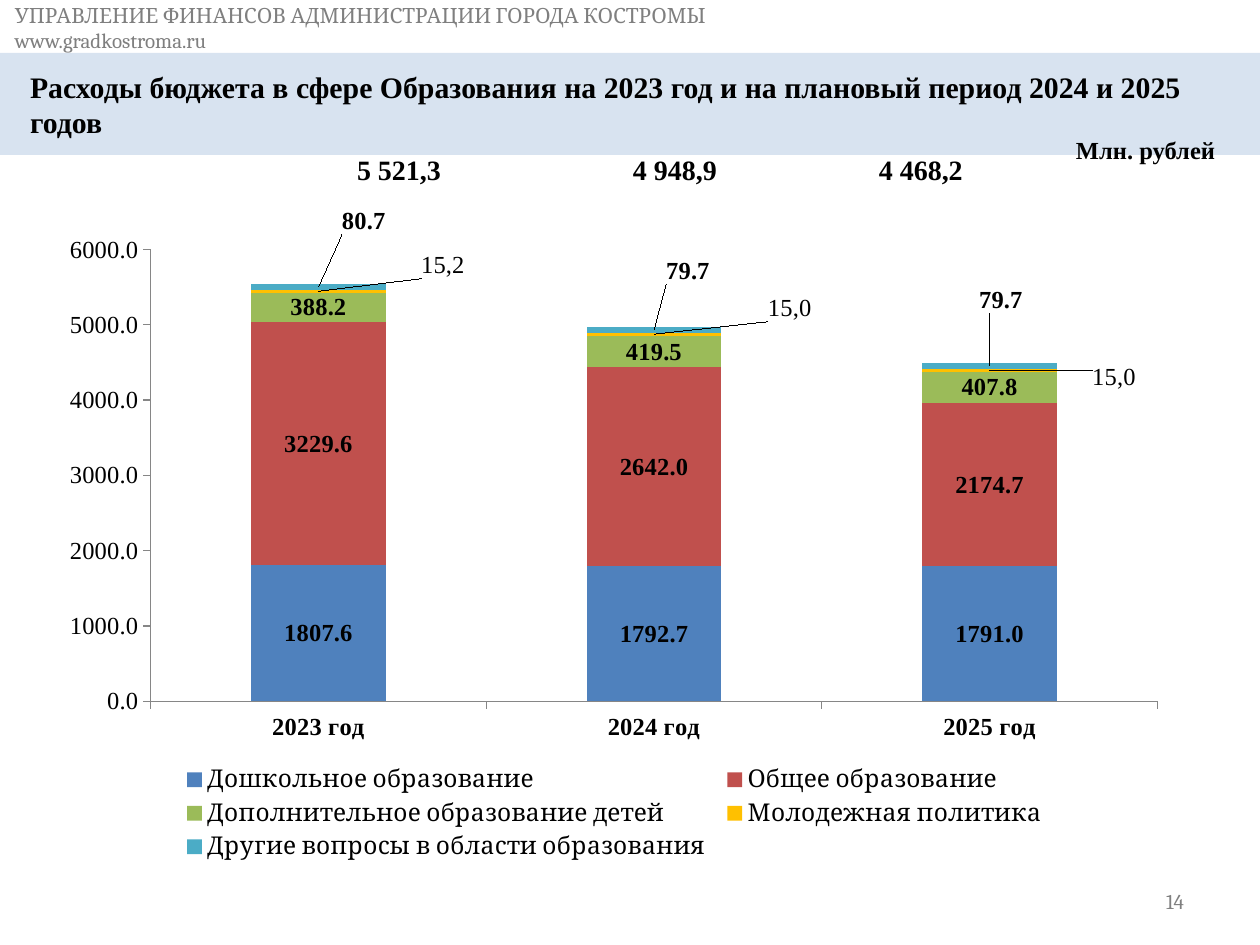
import pptx
import pptx.chart.data
import pptx.dml.color
import pptx.enum.chart
import pptx.enum.text
import pptx.util
import lxml.etree

SCALE = 914400 / 126
SERIF = "Times New Roman"
HEAD = "Cambria"
HUES = {
    "text": "000000", "mute": "7F7F7F", "page": "808080", "band": "D8E3F0",
    "axis": "868686", "pre": "4F81BD", "main": "C0504D", "extra": "9BBB59",
    "youth": "FFC000", "other": "4BACC6",
}
YEARS = ["2023 год", "2024 год", "2025 год"]
ROWS = [
    ("Дошкольное образование", "pre", (1807.6, 1792.7, 1791.0)),
    ("Общее образование", "main", (3229.6, 2642.0, 2174.7)),
    ("Дополнительное образование детей", "extra", (388.2, 419.5, 407.8)),
    ("Молодежная политика", "youth", (40.2, 40.0, 40.0)),
    ("Другие вопросы в области образования", "other", (80.7, 79.7, 79.7)),
]
NOTES = {
    3: [("15,2", 0.11, -0.04), ("15,0", 0.12, -0.04), ("15,0", 0.11, 0.01)],
    4: [(None, 0.04, -0.1), (None, 0.03, -0.09), (None, 0.01, -0.1)],
}
ANCHOR = pptx.enum.text.MSO_ANCHOR
ALIGN = pptx.enum.text.PP_ALIGN


def px(size):
    """Turn pixels into EMU."""
    return pptx.util.Emu(round(size * SCALE))


def hue(name):
    """Look up a colour."""
    return pptx.dml.color.RGBColor.from_string(HUES[name])


def style(font, size=14, bold=False, face=SERIF, tint="text"):
    """Format a font."""
    font.size = pptx.util.Pt(size)
    font.bold = bold
    font.name = face
    font.color.rgb = hue(tint)


def write(shape, text, align=ALIGN.LEFT, anchor=ANCHOR.TOP, pad=(13, 6),
          wrap=True, **look):
    """Put formatted text in a shape; a vertical tab breaks the line."""
    frame = shape.text_frame
    frame.auto_size = pptx.enum.text.MSO_AUTO_SIZE.NONE
    frame.word_wrap = wrap
    frame.vertical_anchor = anchor
    frame.margin_left = frame.margin_right = px(pad[0])
    frame.margin_top = frame.margin_bottom = px(pad[1])
    para = frame.paragraphs[0]
    para.text = text
    para.alignment = align
    for run in para.runs:
        style(run.font, **look)


def label(slide, box, text, **look):
    """Add a text box."""
    write(slide.shapes.add_textbox(*map(px, box)), text, **look)


def title(slide, box):
    """Place the title on its band."""
    shape = slide.shapes.title
    shape.left, shape.top, shape.width, shape.height = map(px, box)
    shape.fill.solid()
    shape.fill.fore_color.rgb = hue("band")
    write(shape, "Расходы бюджета в сфере Образования на 2023 год "
          "и на плановый период 2024 и 2025 годов",
          anchor=ANCHOR.MIDDLE, pad=(30, 15), size=17, bold=True)


def totals(slide, box):
    """Place the yearly totals and the unit."""
    left, top, width, height = box
    for shift, text in ((0, "5 521,3"), (276, "4 948,9"), (522, "4 468,2")):
        label(slide, (left + shift, top, width, height), text, size=16, bold=True)
    label(slide, (left + 719, top - 18, 166, 43), "Млн. рублей",
          wrap=False, bold=True)


def layout(parent, index, **parts):
    """Give a chart part a manual layout."""
    space = parent.nsmap["c"]
    for old in parent.findall(f"{{{space}}}layout"):
        parent.remove(old)
    outer = lxml.etree.Element(f"{{{space}}}layout")
    inner = lxml.etree.SubElement(outer, f"{{{space}}}manualLayout")
    for name, value in parts.items():
        lxml.etree.SubElement(inner, f"{{{space}}}{name}", val=str(value))
    parent.insert(index, outer)


def mark(series, notes):
    """Move the point labels off the bars."""
    for spot, (text, *_) in enumerate(notes):
        tag = series.points[spot].data_label
        if text:
            para = tag.text_frame.paragraphs[0]
            para.text = text
            style(para.runs[0].font)
        else:
            style(tag.font, bold=True)
    for node, (_, x, y) in zip(series._element.xpath("c:dLbls/c:dLbl"), notes):
        layout(node, 1, x=x, y=y)


def axes(chart):
    """Format both axes."""
    ticks = pptx.enum.chart.XL_TICK_MARK
    for axis, bold in ((chart.category_axis, True), (chart.value_axis, False)):
        axis.has_major_gridlines = False
        axis.major_tick_mark = ticks.OUTSIDE
        axis.minor_tick_mark = ticks.NONE
        axis.format.line.color.rgb = hue("axis")
        style(axis.tick_labels.font, bold=bold)
    value = chart.value_axis
    value.minimum_scale, value.maximum_scale, value.major_unit = 0, 6000, 1000
    value.tick_labels.number_format = "0.0"
    value.tick_labels.number_format_is_linked = False


def graph(slide, box):
    """Add the stacked chart of spending."""
    data = pptx.chart.data.CategoryChartData(number_format="0.0")
    data.categories = YEARS
    for name, _, values in ROWS:
        data.add_series(name, values)
    kind = pptx.enum.chart.XL_CHART_TYPE.COLUMN_STACKED
    chart = slide.shapes.add_chart(kind, *map(px, box), data).chart
    style(chart.font, size=10, face=HEAD)
    chart.has_title = False
    chart.has_legend = True
    chart.legend.position = pptx.enum.chart.XL_LEGEND_POSITION.BOTTOM
    chart.legend.include_in_layout = False
    style(chart.legend.font, face=HEAD)
    axes(chart)
    plot = chart.plots[0]
    plot.gap_width, plot.overlap = 150, 100
    plot.vary_by_categories = False
    for order, (series, row) in enumerate(zip(plot.series, ROWS)):
        series.format.fill.solid()
        series.format.fill.fore_color.rgb = hue(row[1])
        tags = series.data_labels
        tags.show_value = True
        tags.number_format = "0.0"
        tags.number_format_is_linked = False
        style(tags.font, bold=True)
        if order in NOTES:
            mark(series, NOTES[order])
    area = chart._chartSpace.xpath("c:chart/c:plotArea")[0]
    layout(area, 0, layoutTarget="inner", xMode="edge", yMode="edge",
           x=0.09, y=0.064, w=0.89, h=0.686)
    layout(chart.legend._element, 1, xMode="edge", yMode="edge",
           x=0.11, y=0.84, w=0.78, h=0.16)


def main():
    """Build and save the slide."""
    deck = pptx.Presentation()
    deck.slide_width, deck.slide_height = px(1260), px(945)
    slide = deck.slides.add_slide(deck.slide_layouts[5])
    title(slide, (0, 53, 1260, 102))
    label(slide, (0, 0, 1260, 55),
          "УПРАВЛЕНИЕ ФИНАНСОВ АДМИНИСТРАЦИИ ГОРОДА КОСТРОМЫ\v"
          "www.gradkostroma.ru", anchor=ANCHOR.MIDDLE, pad=(15, 15),
          size=12, face=HEAD, tint="mute")
    totals(slide, (344, 147, 118, 47))
    graph(slide, (49, 207, 1131, 659))
    label(slide, (903, 876, 294, 50), "14", align=ALIGN.RIGHT,
          anchor=ANCHOR.MIDDLE, size=12, face=HEAD, tint="page")
    deck.save("out.pptx")


if __name__ == "__main__":
    main()
